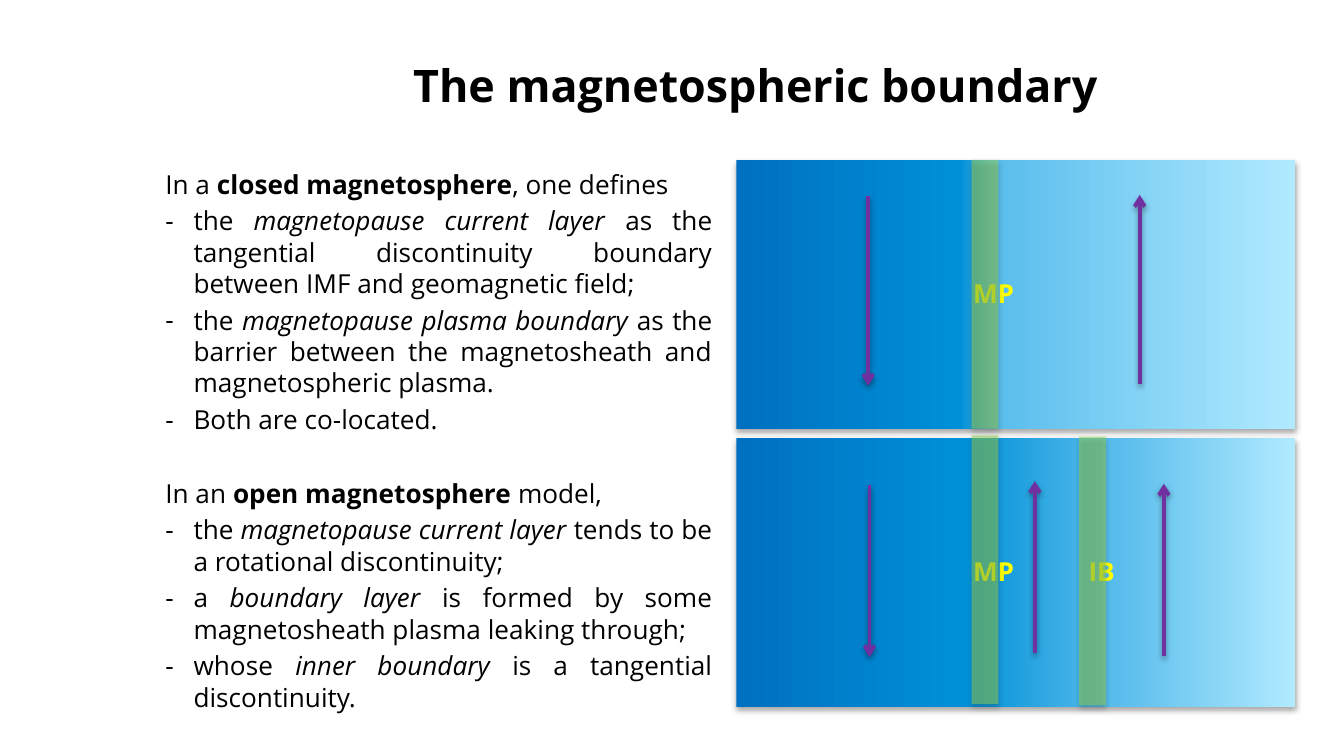
from lxml import etree
from pptx import Presentation
from pptx.dml.color import RGBColor
from pptx.enum import shapes, text
from pptx.oxml import ns
from pptx.util import Inches, Pt

COLOURS = {
    "text": "000000", "label": "FFFF00", "arrow": "7030A0", "band": "92D050",
    "deep": "0070C0", "blue": "0090D8", "sky": "59BDEC", "pale": "B1EAFF",
}
FONT = "Open Sans"
CLOSED = [
    [("In a ", ""), ("closed magnetosphere", "b"), (", one defines", "")],
    [("the ", ""), ("magnetopause current layer ", "i"),
     ("as the tangential discontinuity boundary between IMF and geomagnetic field;", "")],
    [("the ", ""), ("magnetopause plasma boundary ", "i"),
     ("as the barrier between the magnetosheath and magnetospheric plasma.", "")],
    [("Both are co-located.", "")],
]
OPEN = [
    [("In an ", ""), ("open magnetosphere ", "b"), ("model,", "")],
    [("the ", ""), ("magnetopause current layer ", "i"),
     ("tends to be a rotational discontinuity;", "")],
    [("a ", ""), ("boundary layer ", "i"),
     ("is formed by some magnetosheath plasma leaking through;", "")],
    [("whose ", ""), ("inner boundary ", "i"), ("is a tangential discontinuity.", "")],
]


def rgb(name):
    """Return the named colour."""
    return RGBColor.from_string(COLOURS[name])


def child(parent, tag, **attributes):
    """Append a DrawingML element and return it."""
    values = {key: str(value) for key, value in attributes.items()}
    return etree.SubElement(parent, ns.qn(f"a:{tag}"), values)


def add_shadow(properties, opacity, distance):
    """Give a shape or connector a soft shadow falling straight down."""
    effects = properties.find(ns.qn("a:effectLst"))
    if effects is None:
        effects = child(properties, "effectLst")
    shadow = child(effects, "outerShdw", blurRad=Pt(3.1), dist=Pt(distance),
                   dir=5400000, rotWithShape=0)
    child(child(shadow, "srgbClr", val="000000"), "alpha", val=opacity * 1000)


def add_text_frame(slide, box, anchor=text.MSO_ANCHOR.TOP, side=0.09):
    """Add a wrapping text box and return its frame."""
    frame = slide.shapes.add_textbox(*map(Inches, box)).text_frame
    frame.word_wrap = True
    frame.vertical_anchor = anchor
    frame.margin_left = frame.margin_right = Inches(side)
    frame.margin_top = frame.margin_bottom = Inches(0.04)
    return frame


def style(paragraph, size, colour, bold=None):
    """Set the font of a whole paragraph."""
    font = paragraph.font
    font.name, font.size, font.bold = FONT, Pt(size), bold
    font.color.rgb = rgb(colour)


def add_title(slide, box):
    """Place the centred slide title."""
    title = add_text_frame(slide, box, text.MSO_ANCHOR.MIDDLE).paragraphs[0]
    title.text = "The magnetospheric boundary"
    title.alignment = text.PP_ALIGN.CENTER
    style(title, 24, "text", True)


def add_definitions(slide, box):
    """Write both models, each an opening line with dashed points."""
    frame = add_text_frame(slide, box)
    for model in (CLOSED, OPEN):
        for index, runs in enumerate(model):
            first = model is CLOSED and index == 0
            paragraph = frame.paragraphs[0] if first else frame.add_paragraph()
            paragraph.alignment = text.PP_ALIGN.JUSTIFY
            gap = 2.8 if index else 22.6
            paragraph.space_before = Pt(0 if first else gap)
            if index:
                properties = paragraph._p.get_or_add_pPr()
                properties.set("marL", str(Inches(0.21)))
                properties.set("indent", str(-Inches(0.21)))
                child(properties, "buFont", typeface=FONT)
                child(properties, "buChar", char="-")
            style(paragraph, 14, "text")
            for words, emphasis in runs:
                run = paragraph.add_run()
                run.text = words
                if emphasis == "b":
                    run.font.bold = True
                elif emphasis == "i":
                    run.font.italic = True


def add_rectangle(slide, box):
    """Add an outline-free rectangle with a shadow."""
    rectangle = slide.shapes.add_shape(shapes.MSO_SHAPE.RECTANGLE, *map(Inches, box))
    rectangle.line.fill.background()
    rectangle.shadow.inherit = False
    add_shadow(rectangle._element.spPr, 35, 1.8)
    return rectangle


def add_arrow(slide, x, start, end):
    """Draw a vertical field arrow from start to end."""
    arrow = slide.shapes.add_connector(
        shapes.MSO_CONNECTOR.STRAIGHT, *map(Inches, (x, start, x, end)))
    arrow.line.color.rgb = rgb("arrow")
    arrow.line.width = Pt(2)
    child(arrow.line._get_or_add_ln(), "tailEnd", type="arrow")
    add_shadow(arrow._element.spPr, 38, 1.6)


def add_field_panel(slide, box, sky_stop, labels, arrows, bands):
    """Draw one plasma panel with its labels, field arrows and boundaries."""
    left, top, width, height = box
    plasma = add_rectangle(slide, box)
    plasma.fill.gradient()
    plasma.fill.gradient_angle = 0
    stops = plasma._element.spPr.find(ns.qn("a:gradFill")).find(ns.qn("a:gsLst"))
    for stop in list(stops):
        stops.remove(stop)
    for position, name in ((0, "deep"), (40, "blue"), (sky_stop, "sky"), (100, "pale")):
        child(child(stops, "gs", pos=position * 1000), "srgbClr", val=COLOURS[name])
    for name, x in labels:
        frame = add_text_frame(slide, (left + x, top - 0.01, 0.4, height),
                               text.MSO_ANCHOR.MIDDLE, side=0)
        label = frame.paragraphs[0]
        label.text = name
        style(label, 14, "label", True)
    for x, start, end in arrows:
        add_arrow(slide, left + x, top + start, top + end)
    for x, y in bands:
        band = add_rectangle(slide, (left + x, top + y, 0.2, height))
        band.fill.solid()
        band.fill.fore_color.rgb = rgb("band")
        colour = band._element.spPr.find(ns.qn("a:solidFill"))[0]
        child(colour, "alpha", val=52000)


def main():
    """Build and save the slide."""
    deck = Presentation()
    deck.slide_width = Inches(10)
    deck.slide_height = deck.slide_width * 9 // 16
    slide = deck.slides.add_slide(deck.slide_layouts[6])
    add_title(slide, (1.59, 0.23, 8.06, 0.8))
    add_definitions(slide, (1.14, 1.21, 4.25, 4.01))
    add_field_panel(
        slide, (5.48, 1.19, 4.16, 2), 46, [("MP", 1.76)],
        [(0.98, 0.27, 1.68), (3, 1.67, 0.26)], [(1.75, 0)])
    add_field_panel(
        slide, (5.48, 3.26, 4.16, 2), 68, [("MP", 1.76), ("IB", 2.62)],
        [(0.99, 0.35, 1.63), (3.18, 1.62, 0.34), (2.22, 1.6, 0.32)],
        [(1.75, -0.02), (2.55, -0.01)])
    deck.save("out.pptx")


if __name__ == "__main__":
    main()
